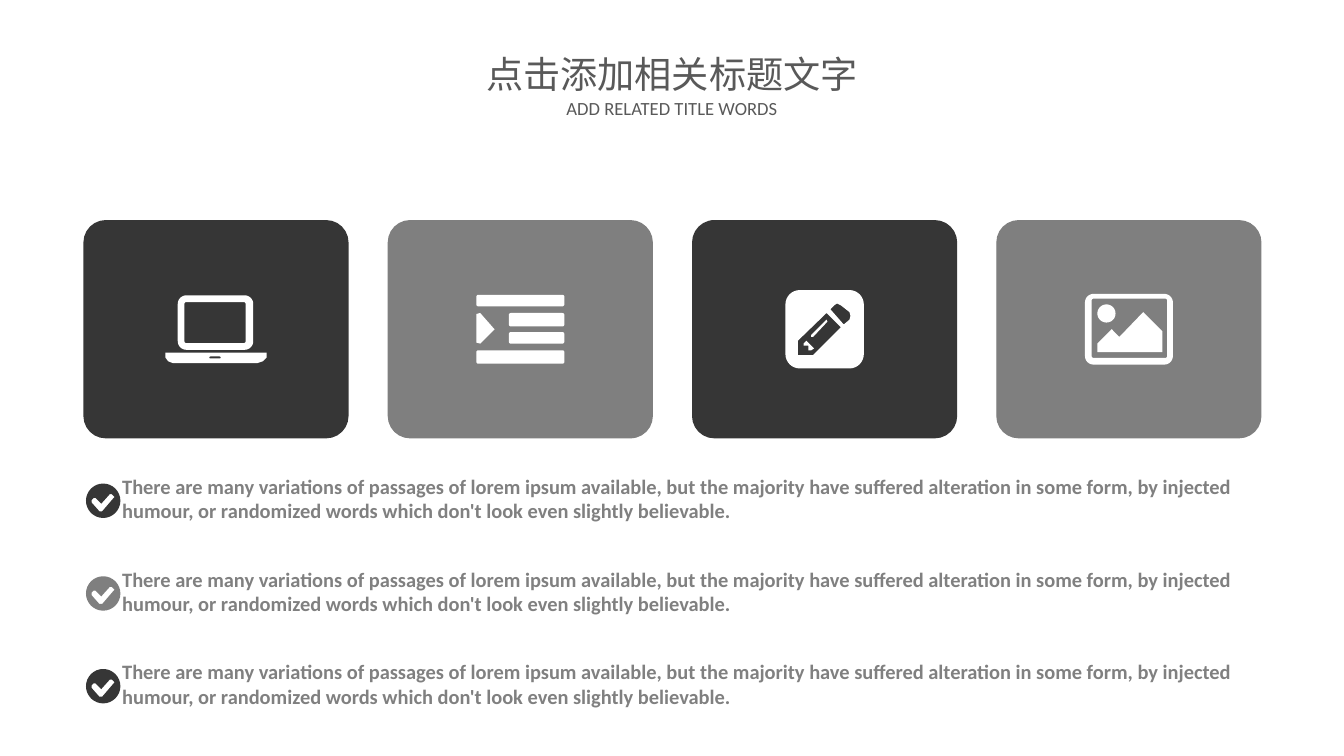
from dataclasses import dataclass
from math import cos, pi, sin

from pptx import Presentation
from pptx.dml.color import RGBColor
from pptx.enum.shapes import MSO_SHAPE as Shape
from pptx.enum.text import MSO_ANCHOR as Anchor, MSO_AUTO_SIZE as AutoSize, PP_ALIGN as Align
from pptx.util import Inches, Pt


@dataclass(frozen=True)
class Theme:
    font: str = "Calibri"
    dark: str = "363636"
    mid: str = "7F7F7F"
    white: str = "FFFFFF"
    heading: str = "595959"
    body: str = "808080"
    title_size: float = 28
    subtitle_size: float = 14
    body_size: float = 15.4


THEME = Theme()
PASSAGE = (
    "There are many variations of passages of lorem ipsum available, but the majority "
    "have suffered alteration in some form, by injected humour, or randomized words "
    "which don't look even slightly believable."
)


def rounded(left, top, width, height, radius):
    """Return the outline points of a rectangle with rounded corners."""
    right, bottom = left + width - radius, top + height - radius
    left, top = left + radius, top + radius
    centres = [(right, bottom), (left, bottom), (left, top), (right, top)]
    steps = 8
    return [
        (x + radius * cos(angle), y + radius * sin(angle))
        for corner, (x, y) in enumerate(centres)
        for angle in [(corner + step / steps) * pi / 2 for step in range(steps + 1)]
    ]


# Each icon is (width, height, outlines) in inches; inner outlines become holes.
LAPTOP = (1.06, 0.71, [
    [(0, .6), (1.06, .6), (1.06, .65), (1.02, .69), (.96, .71), (.08, .71), (.03, .69), (0, .65)],
    rounded(.13, 0, .79, .57, .09),
    rounded(.2, .07, .64, .43, .02),
    rounded(.46, .64, .12, .02, .01),
])
INDENT = (0.92, 0.72, [
    rounded(0, 0, .92, .12, .02),
    rounded(0, .58, .92, .14, .02),
    rounded(.34, .19, .58, .14, .02),
    rounded(.34, .39, .58, .12, .02),
    [(0, .2), (.04, .19), (.19, .36), (.04, .51), (0, .5)],
])
PENCIL = (0.82, 0.82, [
    rounded(0, 0, .82, .82, .15),
    [(.58, .39), (.43, .24), (.13, .53), (.13, .68), (.29, .68)],
    [(.3, .61), (.27, .63), (.24, .63), (.24, .58), (.19, .58), (.19, .56), (.22, .53)],
    [(.44, .33), (.29, .49), (.27, .49), (.27, .47), (.43, .31)],
    [(.67, .31), (.68, .27), (.67, .23), (.58, .16), (.54, .14), (.51, .16), (.47, .2), (.61, .36)],
])
LANDSCAPE = (0.92, 0.74, [
    rounded(0, 0, .92, .74, .09),
    rounded(.07, .05, .79, .62, .02),
    rounded(.13, .11, .19, .19, .095),
    [(.81, .61), (.13, .61), (.13, .52), (.28, .37), (.36, .45), (.61, .19), (.81, .39)],
])
CHECK = (0.36, 0.36, [
    rounded(0, 0, .36, .36, .18),
    [(.29, .13), (.27, .11), (.25, .11), (.16, .21), (.1, .15), (.08, .15),
     (.06, .17), (.06, .2), (.14, .29), (.17, .29), (.29, .15), (.3, .14)],
])


def paint(shape, color, outlined=False):
    shape.shadow.inherit = False
    shape.fill.solid()
    shape.fill.fore_color.rgb = RGBColor.from_string(color)
    if outlined:
        shape.line.color.rgb = RGBColor.from_string(color)
        shape.line.width = Pt(1)
    else:
        shape.line.fill.background()


def add_icon(slide, icon, center_x, center_y, color):
    width, height, outlines = icon
    builder = None
    for outline in outlines:
        points = [(Inches(x), Inches(y)) for x, y in outline]
        if builder is None:
            builder = slide.shapes.build_freeform(*points[0])
        else:
            builder.move_to(*points[0])
        builder.add_line_segments(points[1:], close=True)
    shape = builder.convert_to_shape(Inches(center_x - width / 2), Inches(center_y - height / 2))
    paint(shape, color)


def write(shape, text, size, color, bold=False, align=Align.LEFT, wrap=True, anchor=Anchor.TOP):
    frame = shape.text_frame
    frame.auto_size = AutoSize.NONE
    frame.word_wrap = wrap
    frame.vertical_anchor = anchor
    para = frame.paragraphs[0]
    para.alignment = align
    span = para.add_run()
    span.text = text
    span.font.name = THEME.font
    span.font.size = Pt(size)
    span.font.bold = bold
    span.font.color.rgb = RGBColor.from_string(color)


def add_heading(slide, left, top, width):
    title = slide.shapes.title
    title.left, title.top = Inches(left), Inches(top)
    title.width, title.height = Inches(width), Inches(0.58)
    write(title, "点击添加相关标题文字", THEME.title_size, THEME.heading,
          align=Align.CENTER, wrap=False, anchor=Anchor.MIDDLE)
    subtitle = slide.shapes.add_textbox(
        Inches(left), Inches(top + 0.49), Inches(width), Inches(0.34))
    write(subtitle, "ADD RELATED TITLE WORDS", THEME.subtitle_size, THEME.heading,
          align=Align.CENTER, wrap=False)


def add_cards(slide, left, top, width, height):
    icons = [LAPTOP, INDENT, PENCIL, LANDSCAPE]
    card_width = 2.76
    pitch = (width - card_width) / (len(icons) - 1)
    for index, icon in enumerate(icons):
        x = left + index * pitch
        card = slide.shapes.add_shape(
            Shape.ROUNDED_RECTANGLE, Inches(x), Inches(top), Inches(card_width), Inches(height))
        card.adjustments[0] = 0.1
        paint(card, THEME.mid if index % 2 else THEME.dark, outlined=True)
        add_icon(slide, icon, x + card_width / 2, top + height / 2, THEME.white)


def add_checklist(slide, left, top, width, rows=3, pitch=0.97):
    for index in range(rows):
        y = top + index * pitch
        box = slide.shapes.add_textbox(
            Inches(left + 0.28), Inches(y), Inches(width - 0.28), Inches(0.62))
        write(box, PASSAGE, THEME.body_size, THEME.body, bold=True)
        add_icon(slide, CHECK, left + 0.18, y + 0.33, THEME.mid if index % 2 else THEME.dark)


def main():
    deck = Presentation()
    deck.slide_width, deck.slide_height = Inches(14.06), Inches(7.91)
    slide = deck.slides.add_slide(deck.slide_layouts[5])
    add_heading(slide, left=4.96, top=0.48, width=4.14)
    add_cards(slide, left=0.88, top=2.31, width=12.31, height=2.27)
    add_checklist(slide, left=0.9, top=4.91, width=12.26)
    deck.save("out.pptx")


if __name__ == "__main__":
    main()
